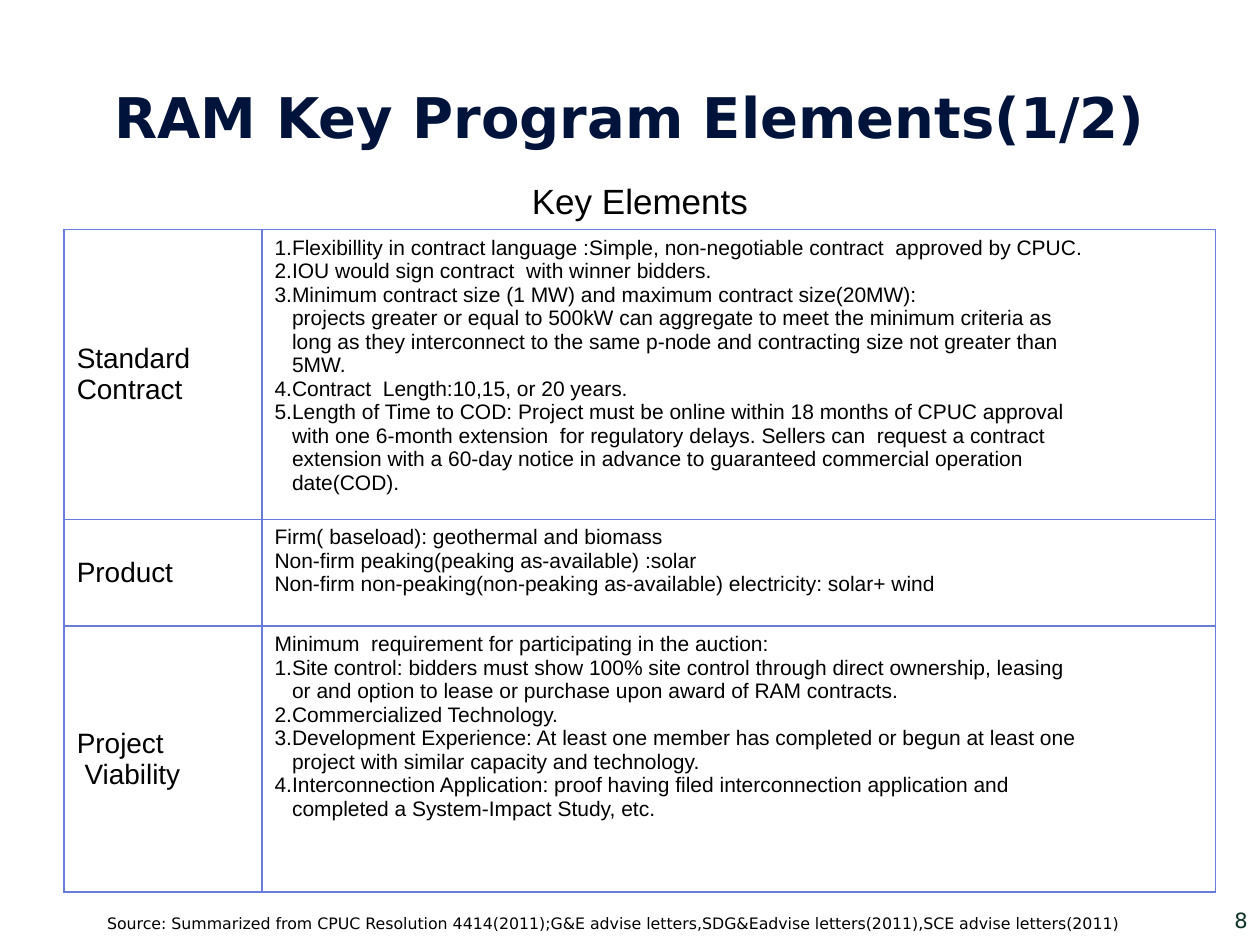
import pptx
import pptx.dml.color
import pptx.enum.text
import pptx.oxml
import pptx.util
from lxml import etree

Pt = pptx.util.Pt
RGBColor = pptx.dml.color.RGBColor
PP_ALIGN = pptx.enum.text.PP_ALIGN
MSO_ANCHOR = pptx.enum.text.MSO_ANCHOR

NAVY = RGBColor(0x00, 0x13, 0x3A)
DARK_GREEN = RGBColor(0x0C, 0x32, 0x26)
BLACK = RGBColor(0, 0, 0)
RULE_BLUE = RGBColor(0x68, 0x7C, 0xDD)
SANS, BODY = "DejaVu Sans", "Arial"

# Content: each element has a label and its points; \v breaks a line inside a point
TITLE = "RAM Key Program Elements(1/2)"
HEADING = "Key Elements"
ELEMENTS = [
    ("Standard Contract", [
        "1.Flexibillity in contract language :Simple, non-negotiable contract  approved by CPUC.",
        "2.IOU would sign contract  with winner bidders.",
        "3.Minimum contract size (1 MW) and maximum contract size(20MW):\v"
        "projects greater or equal to 500kW can aggregate to meet the minimum criteria as\v"
        "long as they interconnect to the same p-node and contracting size not greater than\v"
        "5MW.",
        "4.Contract  Length:10,15, or 20 years.",
        "5.Length of Time to COD: Project must be online within 18 months of CPUC approval\v"
        "with one 6-month extension  for regulatory delays. Sellers can  request a contract\v"
        "extension with a 60-day notice in advance to guaranteed commercial operation\v"
        "date(COD).",
    ]),
    ("Product", [
        "Firm( baseload): geothermal and biomass",
        "Non-firm peaking(peaking as-available) :solar",
        "Non-firm non-peaking(non-peaking as-available) electricity: solar+ wind",
    ]),
    ("Project\n Viability", [
        "Minimum  requirement for participating in the auction:",
        "1.Site control: bidders must show 100% site control through direct ownership, leasing\v"
        "or and option to lease or purchase upon award of RAM contracts.",
        "2.Commercialized Technology.",
        "3.Development Experience: At least one member has completed or begun at least one\v"
        "project with similar capacity and technology.",
        "4.Interconnection Application: proof having filed interconnection application and\v"
        "completed a System-Impact Study, etc.",
    ]),
]
SOURCE = ("Source: Summarized from CPUC Resolution 4414(2011);G&E advise letters,"
          "SDG&Eadvise letters(2011),SCE advise letters(2011)")
PAGE = "8"

# Layout, in points
TABLE_LEFT, TABLE_TOP = 36.7, 100
COLUMN_WIDTHS = (113, 545)
ROW_HEIGHTS = (29, 155, 61, 152)
HANGING = 10


def write(frame, text, size, font, color, align=PP_ALIGN.LEFT, bold=False):
    frame.text = text
    frame.word_wrap = True
    for paragraph in frame.paragraphs:
        paragraph.alignment = align
        for run in paragraph.runs:
            run.font.size, run.font.name = Pt(size), font
            run.font.bold = bold
            run.font.color.rgb = color


def add_note(slide, box, text, size, color, anchor):
    note = slide.shapes.add_textbox(*[Pt(v) for v in box])
    write(note.text_frame, text, size, SANS, color, PP_ALIGN.RIGHT)
    note.text_frame.vertical_anchor = anchor


def set_borders(cell, ruled_sides):
    properties = cell._tc.get_or_add_tcPr()
    for index, side in enumerate("LRTB"):
        line = etree.Element(pptx.oxml.ns.qn(f"a:ln{side}"), w=str(Pt(1)))
        if side in ruled_sides:
            fill = etree.SubElement(line, pptx.oxml.ns.qn("a:solidFill"))
            etree.SubElement(fill, pptx.oxml.ns.qn("a:srgbClr"), val=str(RULE_BLUE))
        else:
            etree.SubElement(line, pptx.oxml.ns.qn("a:noFill"))
        properties.insert(index, line)


def fill_cell(cell, text, size, align=PP_ALIGN.LEFT, anchor=MSO_ANCHOR.MIDDLE):
    write(cell.text_frame, text, size, BODY, BLACK, align)
    cell.vertical_anchor = anchor


def hang_numbered(frame):
    for paragraph in frame.paragraphs:
        if paragraph.text[0].isdigit():
            properties = paragraph._p.get_or_add_pPr()
            properties.set("marL", str(Pt(HANGING)))
            properties.set("indent", str(-Pt(HANGING)))


def add_elements_table(slide):
    table = slide.shapes.add_table(
        len(ROW_HEIGHTS), len(COLUMN_WIDTHS), Pt(TABLE_LEFT), Pt(TABLE_TOP),
        Pt(sum(COLUMN_WIDTHS)), Pt(sum(ROW_HEIGHTS))).table
    table.first_row = table.horz_banding = False
    for column, width in zip(table.columns, COLUMN_WIDTHS):
        column.width = Pt(width)
    for index, (row, height) in enumerate(zip(table.rows, ROW_HEIGHTS)):
        row.height = Pt(height)
        for cell in row.cells:
            cell.fill.background()
            set_borders(cell, "LRTB" if index else "B")

    # Heading row, then one row per element
    table.cell(0, 0).merge(table.cell(0, 1))
    fill_cell(table.cell(0, 0), HEADING, 20, PP_ALIGN.CENTER)
    for index, (label, points) in enumerate(ELEMENTS, start=1):
        fill_cell(table.cell(index, 0), label, 16)
        details = table.cell(index, 1)
        fill_cell(details, "\n".join(points), 12, anchor=MSO_ANCHOR.TOP)
        hang_numbered(details.text_frame)


def main():
    deck = pptx.Presentation()
    deck.slide_width, deck.slide_height = Pt(720), Pt(540)
    slide = deck.slides.add_slide(deck.slide_layouts[5])

    # Title
    title = slide.shapes.title
    title.left, title.top, title.width, title.height = Pt(36), Pt(21.6), Pt(648), Pt(90)
    write(title.text_frame, TITLE, 32, SANS, NAVY, PP_ALIGN.CENTER, bold=True)
    title.text_frame.vertical_anchor = MSO_ANCHOR.MIDDLE

    # Page number, table and source line
    add_note(slide, (552, 511, 168, 29), PAGE, 12, DARK_GREEN, MSO_ANCHOR.MIDDLE)
    add_elements_table(slide)
    add_note(slide, (38, 518.5, 608, 18), SOURCE, 9, BLACK, MSO_ANCHOR.TOP)

    deck.save("out.pptx")


if __name__ == "__main__":
    main()
